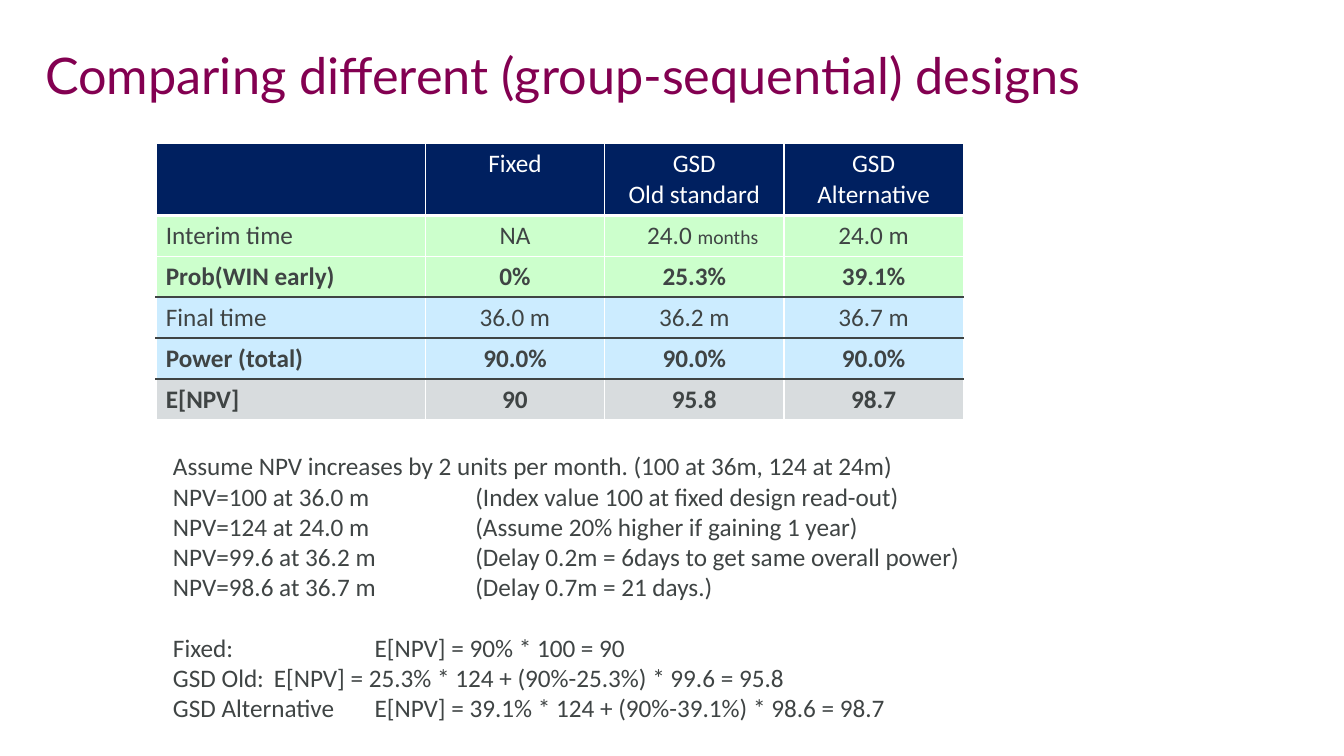
"""Build a slide comparing fixed and group-sequential designs."""
from dataclasses import dataclass

from lxml import etree
from pptx import Presentation
from pptx.dml.color import RGBColor
from pptx.enum.text import MSO_ANCHOR, MSO_AUTO_SIZE, PP_ALIGN
from pptx.oxml.ns import qn
from pptx.util import Cm, Pt

LEFT, CENTER = PP_ALIGN.LEFT, PP_ALIGN.CENTER
TOP = MSO_ANCHOR.TOP
NO_FIT, GROW = MSO_AUTO_SIZE.NONE, MSO_AUTO_SIZE.SHAPE_TO_FIT_TEXT
COLORS = {"plum": "830051", "navy": "002060", "text": "3F4444", "white": "FFFFFF",
          "green": "CCFFCC", "blue": "CCECFF", "gray": "D8DCDE"}
SLIDE_WIDTH, SLIDE_HEIGHT = 33.87, 19.05
HEADER_HEIGHT, ROW_HEIGHT = 1.81, 1.03
COLUMN_WIDTHS = (6.79, 4.52, 4.52, 4.52)
CELL_INSET, MONTHS_INSET = 0.25, 0.68


@dataclass(frozen=True)
class Rule:
    """A horizontal border."""
    color: str = "white"
    points: float = 1


THIN, THICK, DARK = Rule(), Rule(points=3), Rule("text", 1.5)


@dataclass(frozen=True)
class TableRow:
    """A table row with its style."""
    cells: tuple[str, ...]
    fill: str
    color: str = "text"
    bold: bool = False
    top: Rule = THIN
    bottom: Rule = THIN


@dataclass(frozen=True)
class Note:
    """A line of notes with an optional tab stop and space before."""
    text: str
    tab: float = 0
    space: float = 0


ROWS = (
    TableRow(("", "Fixed", "GSD\nOld standard", "GSD\nAlternative"), "navy", "white", bottom=THICK),
    TableRow(("Interim time", "NA", "24.0 |months", "24.0 m"), "green", top=THICK),
    TableRow(("Prob(WIN early)", "0%", "25.3%", "39.1%"), "green", bold=True, bottom=DARK),
    TableRow(("Final time", "36.0 m", "36.2 m", "36.7 m"), "blue", top=DARK, bottom=DARK),
    TableRow(("Power (total)", "90.0%", "90.0%", "90.0%"), "blue", bold=True, top=DARK, bottom=DARK),
    TableRow(("E[NPV]", "90", "95.8", "98.7"), "gray", bold=True, top=DARK),
)
NOTES = (
    Note("Assume NPV increases by 2 units per month. (100 at 36m, 124 at 24m)"),
    Note("NPV=100 at 36.0 m\t(Index value 100 at fixed design read-out)", 7.62),
    Note("NPV=124 at 24.0 m\t(Assume 20% higher if gaining 1 year)", 7.62),
    Note("NPV=99.6 at 36.2 m\t(Delay 0.2m = 6days to get same overall power)", 7.62),
    Note("NPV=98.6 at 36.7 m\t(Delay 0.7m = 21 days.)", 7.62),
    Note("Fixed:\tE[NPV] = 90% * 100 = 90", 5.08, 21.6),
    Note("GSD Old:\tE[NPV] = 25.3% * 124 + (90%-25.3%) * 99.6 = 95.8", 2.54),
    Note("GSD Alternative\tE[NPV] = 39.1% * 124 + (90%-39.1%) * 98.6 = 98.7", 5.08),
)


def write(para, text: str, *, size: float = 18, color: str = "text", font: str = "Calibri",
          bold: bool = False, align=LEFT) -> None:
    """Add a formatted span of text to a paragraph."""
    para.alignment = align
    span = para.add_run()
    span.text = text
    span.font.name = font
    span.font.size = Pt(size)
    span.font.bold = bold
    span.font.color.rgb = RGBColor.from_string(COLORS[color])


def add_border(cell, side: str, rule: Rule) -> None:
    """Draw one border of a table cell."""
    properties = cell._tc.get_or_add_tcPr()
    line = etree.SubElement(properties, qn(f"a:ln{side}"), w=str(Pt(rule.points)))
    fill = etree.SubElement(line, qn("a:solidFill"))
    etree.SubElement(fill, qn("a:srgbClr"), val=COLORS[rule.color])


def fill_cell(cell, text: str, row: TableRow, align) -> None:
    """Style a table cell and write its text, with a smaller span after a bar."""
    for side, rule in (("L", THIN), ("R", THIN), ("T", row.top), ("B", row.bottom)):
        add_border(cell, side, rule)
    cell.fill.solid()
    cell.fill.fore_color.rgb = RGBColor.from_string(COLORS[row.fill])
    cell.margin_left = Cm(MONTHS_INSET if "|" in text else CELL_INSET)
    frame = cell.text_frame
    for index, line in enumerate(text.split("\n")):
        para = frame.add_paragraph() if index else frame.paragraphs[0]
        for part, size in zip(line.split("|"), (18, 14)):
            write(para, part, size=size, color=row.color, bold=row.bold, align=align)


def add_title(slide) -> None:
    """Place and format the title."""
    title = slide.shapes.title
    title.left, title.top, title.width, title.height = Cm(1.14), Cm(1.12), Cm(31.6), Cm(2.79)
    frame = title.text_frame
    frame.margin_left = frame.margin_top = frame.margin_right = frame.margin_bottom = 0
    frame.vertical_anchor = TOP
    frame.auto_size = NO_FIT
    write(frame.paragraphs[0], "Comparing different (group-sequential) designs",
          size=36, color="plum", font="Lato")


def add_design_table(slide) -> None:
    """Add the table of designs."""
    height = HEADER_HEIGHT + ROW_HEIGHT * (len(ROWS) - 1)
    table = slide.shapes.add_table(len(ROWS), len(COLUMN_WIDTHS), Cm(3.93), Cm(3.62),
                                   Cm(sum(COLUMN_WIDTHS)), Cm(height)).table
    table.horz_banding = False
    for column, width in zip(table.columns, COLUMN_WIDTHS):
        column.width = Cm(width)
    for index, row in enumerate(ROWS):
        table.rows[index].height = Cm(ROW_HEIGHT if index else HEADER_HEIGHT)
        for column, text in enumerate(row.cells):
            fill_cell(table.cell(index, column), text, row, CENTER if column else LEFT)


def add_notes(slide) -> None:
    """Add the assumptions and calculations below the table."""
    box = slide.shapes.add_textbox(Cm(4.11), Cm(11.23), Cm(23.29), Cm(7.19))
    frame = box.text_frame
    frame.word_wrap = True
    frame.auto_size = GROW
    for index, note in enumerate(NOTES):
        para = frame.add_paragraph() if index else frame.paragraphs[0]
        if note.space:
            para.space_before = Pt(note.space)
        if note.tab:
            stops = etree.SubElement(para._p.get_or_add_pPr(), qn("a:tabLst"))
            etree.SubElement(stops, qn("a:tab"), pos=str(Cm(note.tab)), algn="l")
        write(para, note.text)


def main() -> None:
    """Build and save the deck."""
    deck = Presentation()
    deck.slide_width, deck.slide_height = Cm(SLIDE_WIDTH), Cm(SLIDE_HEIGHT)
    slide = deck.slides.add_slide(deck.slide_layouts[5])
    add_title(slide)
    add_design_table(slide)
    add_notes(slide)
    deck.save("out.pptx")


if __name__ == "__main__":
    main()
